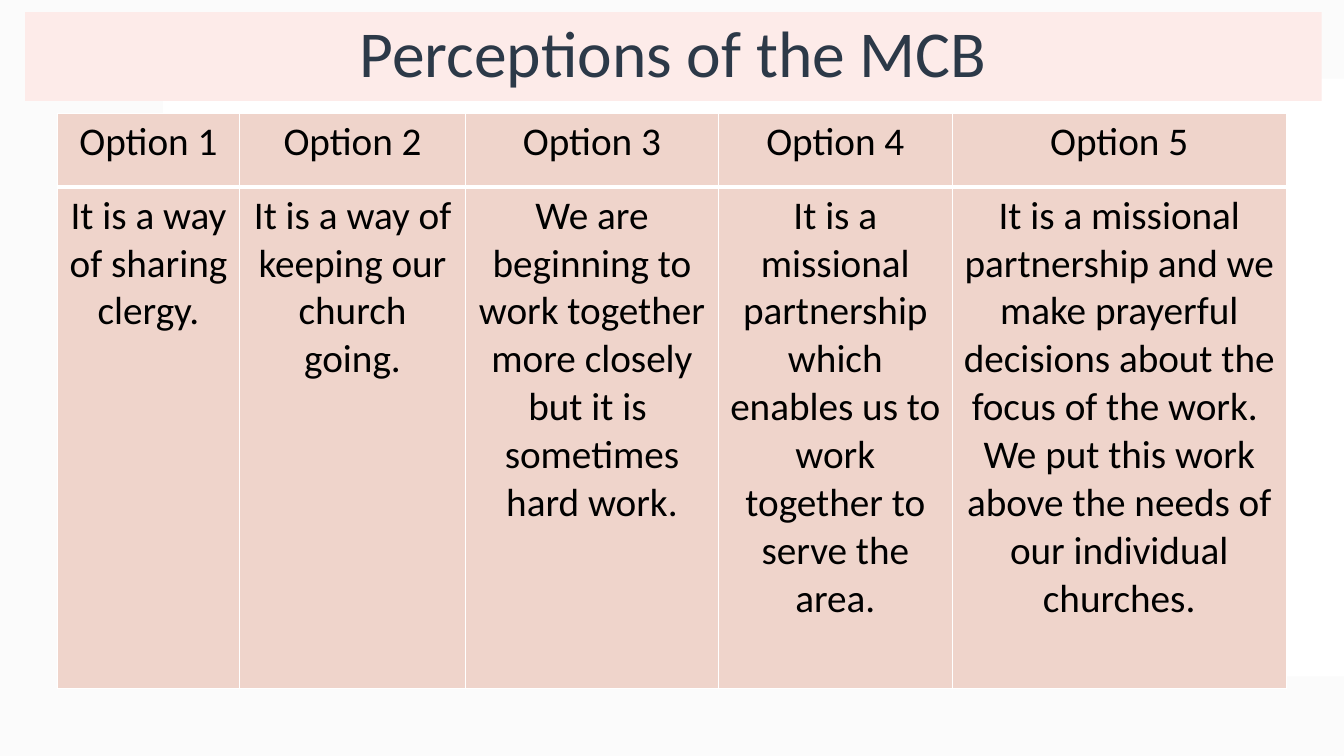
from lxml.etree import SubElement
from pptx import Presentation
from pptx.dml.color import RGBColor
from pptx.enum.shapes import MSO_SHAPE
from pptx.enum.text import MSO_ANCHOR, PP_ALIGN
from pptx.oxml.ns import qn
from pptx.util import Pt

OPTIONS = [
    ("Option 1", 130.3, "It is a way of sharing clergy."),
    ("Option 2", 161.3, "It is a way of keeping our church going."),
    ("Option 3", 180.7, "We are beginning to work together more closely but it is \n"
                        "sometimes hard work."),
    ("Option 4", 167, "It is a missional partnership which enables us to work "
                      "together to serve the area."),
    ("Option 5", 238.6, "It is a missional partnership and we make prayerful decisions "
                        "about the focus of the work.  We put this work above the "
                        "needs of our individual churches."),
]
ROW_HEIGHTS = [52.5, 358.6]


def paint(fill, color):
    fill.solid()
    fill.fore_color.rgb = RGBColor.from_string(color)


def write(frame, text, size, color, spacing=1.0):
    """Fill a text frame with centred paragraphs, one per line of text."""
    frame.text = text
    for paragraph in frame.paragraphs:
        paragraph.alignment = PP_ALIGN.CENTER
        paragraph.line_spacing = spacing
        font = paragraph.font
        for run in paragraph.runs:
            font = run.font
            font.name = "Calibri"
            font.size = Pt(size)
            font.bold = False
            font.color.rgb = RGBColor.from_string(color)


prs = Presentation()
prs.slide_width, prs.slide_height = Pt(960), Pt(540)
slide = prs.slides.add_slide(prs.slide_layouts[5])

# Backdrop, placed behind the title
backdrops = [(0, 0, 960, 540, "F4F4F4", 35), (116.6, 56.2, 843.4, 427, "FFFFFF", 100)]
for depth, (left, top, width, height, color, opacity) in enumerate(backdrops):
    panel = slide.shapes.add_shape(
        MSO_SHAPE.RECTANGLE, Pt(left), Pt(top), Pt(width), Pt(height))
    panel.shadow.inherit = False
    panel.line.fill.background()
    paint(panel.fill, color)
    tint = panel.fill._xPr.find(qn("a:solidFill"))[0]
    SubElement(tint, qn("a:alpha"), val=str(opacity * 1000))
    slide.shapes._spTree.insert(2 + depth, panel._element)

title = slide.shapes.title
title.left, title.top, title.width, title.height = Pt(18), Pt(8.6), Pt(926), Pt(63.4)
paint(title.fill, "FDEBE9")
title.text_frame.vertical_anchor = MSO_ANCHOR.MIDDLE
write(title.text_frame, "Perceptions of the MCB", size=46.8, color="2C3948", spacing=0.9)

# Options table
table = slide.shapes.add_table(
    len(ROW_HEIGHTS), len(OPTIONS), Pt(40.9), Pt(80.9),
    Pt(sum(width for _, width, _ in OPTIONS)), Pt(sum(ROW_HEIGHTS))).table
for row, height in zip(table.rows, ROW_HEIGHTS):
    row.height = Pt(height)
for col, (option, width, perception) in enumerate(OPTIONS):
    table.columns[col].width = Pt(width)
    for row, text in enumerate((option, perception)):
        cell = table.cell(row, col)
        write(cell.text_frame, text, size=28, color="000000")
        header_edge = "a:lnB" if row == 0 else "a:lnT"
        properties = cell._tc.get_or_add_tcPr()
        for side in ("a:lnL", "a:lnR", "a:lnT", "a:lnB"):
            weight = 3 if side == header_edge else 1
            border = SubElement(properties, qn(side), w=str(Pt(weight)))
            SubElement(SubElement(border, qn("a:solidFill")), qn("a:srgbClr"), val="FFFFFF")
        paint(cell.fill, "EFD4CB")

prs.save("out.pptx")
